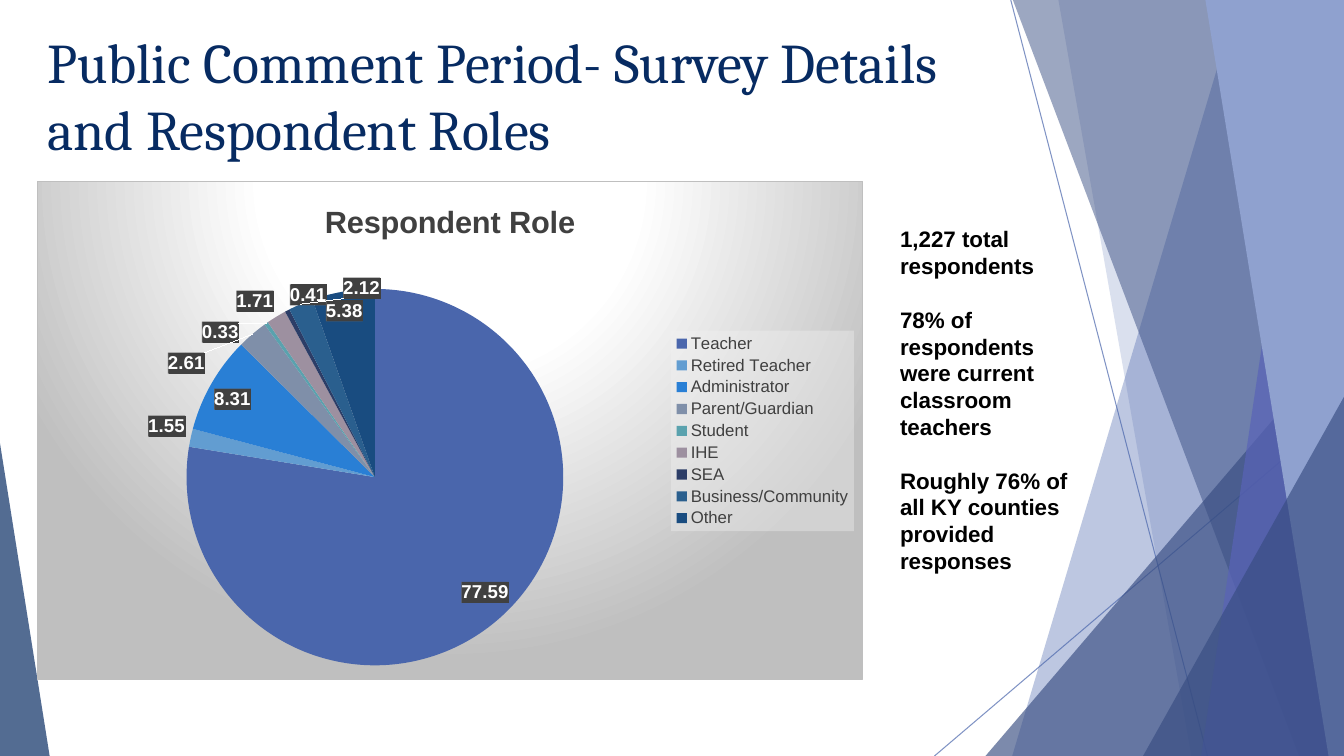
"""Build the slide on survey details and respondent roles."""
import pptx
import pptx.chart.data
import pptx.dml.color
import pptx.enum.chart
import pptx.enum.shapes
import pptx.enum.text
import pptx.oxml
import pptx.oxml.ns
import pptx.util

Pt = pptx.util.Pt
RGBColor = pptx.dml.color.RGBColor
qn = pptx.oxml.ns.qn
NAVY = RGBColor(0x07, 0x2B, 0x62)
BLUE = RGBColor(0x4A, 0x66, 0xAC)
DEEP = RGBColor(0x37, 0x4C, 0x81)
VIOLET = RGBColor(0x59, 0x63, 0xB8)
PALE = RGBColor(0x8F, 0xA1, 0xCF)
BLACK = RGBColor(0, 0, 0)
WHITE = RGBColor(255, 255, 255)
GREY = RGBColor(0x40, 0x40, 0x40)
ROLES = [
    ("Teacher", 77.59, BLUE),
    ("Retired Teacher", 1.55, RGBColor(0x62, 0x9D, 0xD1)),
    ("Administrator", 8.31, RGBColor(0x29, 0x7F, 0xD5)),
    ("Parent/Guardian", 2.61, RGBColor(0x7F, 0x8F, 0xA9)),
    ("Student", 0.33, RGBColor(0x5A, 0xA2, 0xAE)),
    ("IHE", 1.71, RGBColor(0x9D, 0x90, 0xA0)),
    ("SEA", 0.41, RGBColor(0x2C, 0x3D, 0x67)),
    ("Business/Community", 2.12, RGBColor(0x2A, 0x5F, 0x8E)),
    ("Other", 5.38, RGBColor(0x19, 0x4C, 0x80)),
]
FACTS = [
    "1,227 total respondents",
    "78% of respondents were current classroom teachers",
    "Roughly 76% of all KY counties provided responses",
]
SPACE = ('xmlns:a="http://schemas.openxmlformats.org/drawingml/2006/main" '
         'xmlns:c="http://schemas.openxmlformats.org/drawingml/2006/chart"')


def make(tag, inner=""):
    return pptx.oxml.parse_xml(f"<{tag} {SPACE}>{inner}</{tag}>")


def tint(fill, shade, alpha, node):
    fill.solid()
    fill.fore_color.rgb = shade
    hue = next(node.iter(qn("a:srgbClr")))
    hue.append(pptx.oxml.parse_xml(f'<a:alpha {SPACE} val="{alpha * 1000}"/>'))


deck = pptx.Presentation()
deck.slide_width, deck.slide_height = Pt(960), Pt(540)
slide = deck.slides.add_slide(deck.slide_layouts[5])
shapes = slide.shapes

for ends in [(722, 0, 862.5, 540), (960, 291, 667.5, 540)]:
    line = shapes.add_connector(
        pptx.enum.shapes.MSO_CONNECTOR.STRAIGHT, *map(Pt, ends))
    line.line.width = Pt(0.75)
    props = line.element.spPr
    tint(line.line.fill, BLUE, 69, props)
    props.append(make("a:effectLst"))

SHARDS = [
    ("band", (884, 960, 960, 723), BLUE, 36),
    ("band", (756, 960, 960, 851), BLUE, 20),
    ("peak", (703.5, 240.5, 256.5, 300, 1), DEEP, 65),
    ("band", (723.5, 960, 960, 928), DEEP, 49),
    ("band", (938, 960, 960, 858), VIOLET, 69),
    ("band", (861, 960, 960, 949), PALE, 100),
    ("peak", (816.5, 283.5, 143.5, 256.5, 1), DEEP, 65),
    ("peak", (0, 316.5, 35.5, 223.5, 0), NAVY, 69),
]
for kind, spots, shade, alpha in SHARDS:
    if kind == "band":
        path = [(Pt(x), Pt(y)) for x, y in zip(spots, (0, 0, 540, 540))]
        pen = shapes.build_freeform(*path[0])
        pen.add_line_segments(path[1:])
        shard = pen.convert_to_shape()
    else:
        shard = shapes.add_shape(
            pptx.enum.shapes.MSO_SHAPE.ISOSCELES_TRIANGLE, *map(Pt, spots[:4]))
        shard.adjustments[0] = spots[4]
    shard.shadow.inherit = False
    shard.line.fill.background()
    tint(shard.fill, shade, alpha, shard.element.spPr)

title = shapes.title
title.left, title.top, title.width, title.height = map(Pt, (26.6, 16, 677, 103.5))
frame = title.text_frame
frame.word_wrap = True
frame.vertical_anchor = pptx.enum.text.MSO_ANCHOR.MIDDLE
para = frame.paragraphs[0]
para.alignment = pptx.enum.text.PP_ALIGN.LEFT
run = para.add_run()
run.text = "Public Comment Period- Survey Details and Respondent Roles"
run.font.name, run.font.size, run.font.color.rgb = "Cambria", Pt(40), NAVY

data = pptx.chart.data.CategoryChartData()
data.categories = [role for role, share, shade in ROLES]
data.add_series("Respondent Role", [share for role, share, shade in ROLES])
chart = shapes.add_chart(
    pptx.enum.chart.XL_CHART_TYPE.PIE,
    *map(Pt, (26.6, 129.6, 589.7, 356.4)), data).chart
chart.font.name, chart.font.size, chart.font.color.rgb = "Arial", Pt(10), BLACK
root = chart.element
root.find(qn("c:chart")).addnext(make("c:spPr", (
    '<a:gradFill><a:gsLst><a:gs pos="0"><a:srgbClr val="FFFFFF"/></a:gs>'
    '<a:gs pos="39000"><a:srgbClr val="FFFFFF"/></a:gs>'
    '<a:gs pos="100000"><a:srgbClr val="BFBFBF"/></a:gs></a:gsLst>'
    '<a:path path="circle"><a:fillToRect l="50000" t="-80000" r="50000" b="180000"/>'
    '</a:path></a:gradFill><a:ln w="9525"><a:solidFill>'
    '<a:srgbClr val="BFBFBF"/></a:solidFill></a:ln>')))

chart.has_title = True
run = chart.chart_title.text_frame.paragraphs[0].add_run()
run.text = "Respondent Role"
run.font.name, run.font.size, run.font.bold = "Arial", Pt(22), True
run.font.color.rgb = GREY
chart.chart_title.include_in_layout = False

area = next(root.iter(qn("c:plotArea")))
for old in area.findall(qn("c:layout")):
    area.remove(old)
sides = "".join(f'<c:{side} val="{size}"/>' for side, size in
                [("x", 0.18), ("y", 0.215), ("w", 0.458), ("h", 0.756)])
area.insert(0, make("c:layout", (
    '<c:manualLayout><c:layoutTarget val="inner"/><c:xMode val="edge"/>'
    f'<c:yMode val="edge"/>{sides}</c:manualLayout>')))

chart.has_legend = True
legend = chart.legend
legend.position = pptx.enum.chart.XL_LEGEND_POSITION.RIGHT
legend.include_in_layout = False
legend.font.name, legend.font.size, legend.font.color.rgb = "Arial", Pt(12), GREY
key = next(root.iter(qn("c:legend")))
key.find(qn("c:txPr")).addprevious(make("c:spPr", (
    '<a:solidFill><a:srgbClr val="F2F2F2"><a:alpha val="39000"/>'
    '</a:srgbClr></a:solidFill>')))

plot = chart.plots[0]
plot.vary_by_categories = True
pie = plot.series[0]
for spot, (role, share, shade) in enumerate(ROLES):
    slice_ = pie.points[spot].format
    slice_.fill.solid()
    slice_.fill.fore_color.rgb = shade
    slice_.line.fill.background()
labels = pie.data_labels
labels.show_value = True
labels.position = pptx.enum.chart.XL_LABEL_POSITION.BEST_FIT
labels.font.name, labels.font.size, labels.font.bold = "Arial", Pt(13.3), True
labels.font.color.rgb = WHITE
tags = next(root.iter(qn("c:dLbls")))
tags.find(qn("c:txPr")).addprevious(make("c:spPr", (
    '<a:pattFill prst="dkVert"><a:fgClr><a:srgbClr val="404040"/></a:fgClr>'
    '<a:bgClr><a:srgbClr val="595959"/></a:bgClr></a:pattFill>')))
tags.append(make("c:leaderLines", (
    '<c:spPr><a:ln w="9525"><a:solidFill><a:srgbClr val="F2F2F2"/>'
    '</a:solidFill></a:ln></c:spPr>')))

frame = shapes.add_textbox(*map(Pt, (635.8, 157.7, 134.6, 259.2))).text_frame
frame.word_wrap = True
for spot, fact in enumerate(FACTS):
    para = frame.add_paragraph() if spot else frame.paragraphs[0]
    para.line_spacing = Pt(19.15)
    if spot:
        para.space_before = Pt(19.15)
    run = para.add_run()
    run.text = fact
    run.font.name, run.font.size, run.font.bold = "Arial", Pt(16), True
    run.font.color.rgb = BLACK

deck.save("out.pptx")
